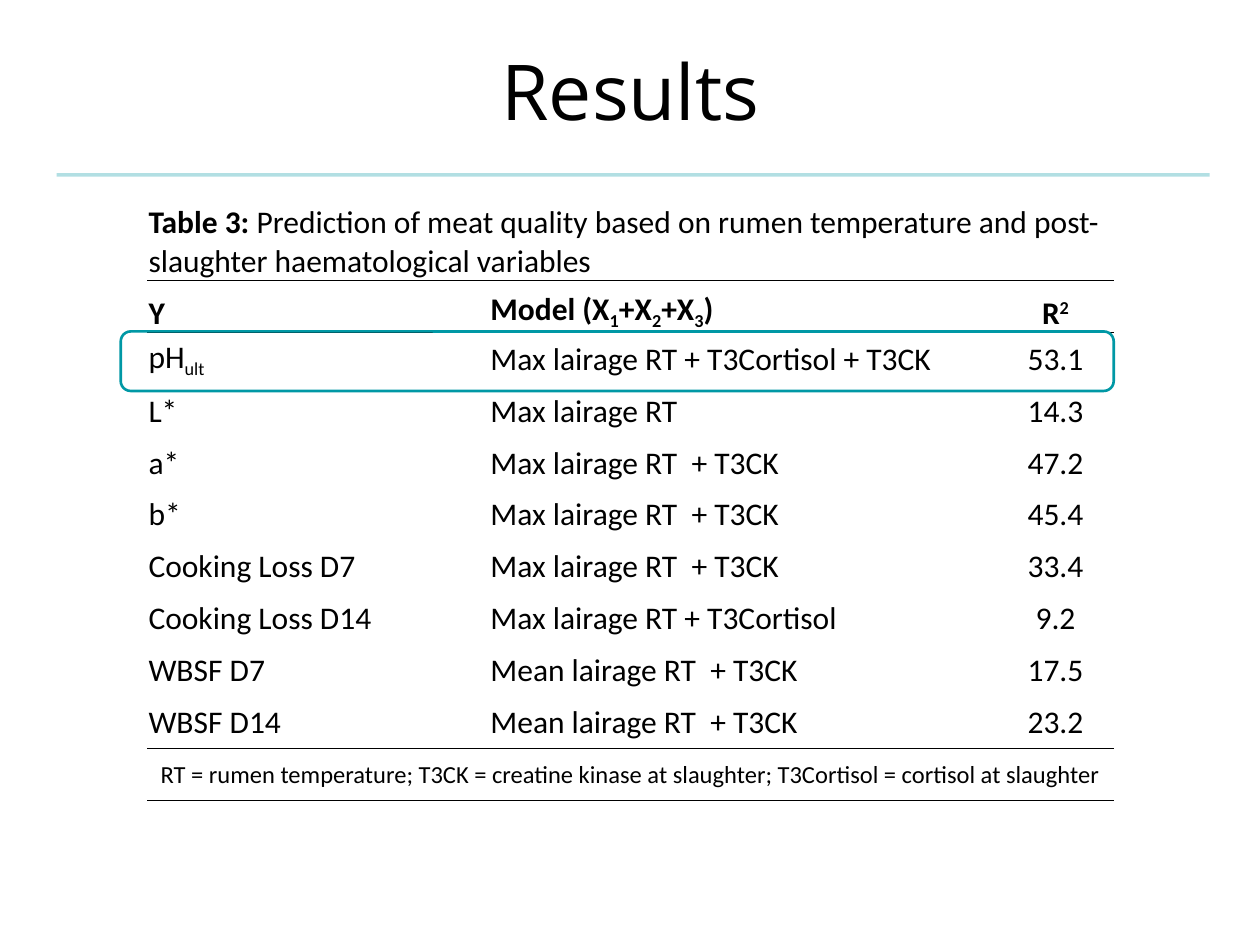
from lxml import etree
from pptx import Presentation
from pptx.dml.color import RGBColor
from pptx.enum import shapes, text
from pptx.oxml import ns
from pptx.util import Pt

TITLE = "Results"
TEAL, BLACK = "0098A5", "000000"
SUB, SUPER = -25, 30

CAPTION = [("Table 3: ", {"bold": True}),
           ("Prediction of meat quality based on rumen temperature and post-slaughter haematological variables", {})]
HEADER = [
    [("Y", 0)],
    [("Model (X", 0), ("1", SUB), ("+X", 0), ("2", SUB), ("+X", 0), ("3", SUB), (")", 0)],
    [("R", 0), ("2", SUPER)],
]
MODELS = [
    ([("pH", 0), ("ult", SUB)], "Max lairage RT + T3Cortisol + T3CK", "53.1"),
    ("L*", "Max lairage RT", "14.3"),
    ("a*", "Max lairage RT  + T3CK", "47.2"),
    ("b*", "Max lairage RT  + T3CK", "45.4"),
    ("Cooking Loss D7", "Max lairage RT  + T3CK", "33.4"),
    ("Cooking Loss D14", "Max lairage RT + T3Cortisol", "9.2"),
    ("WBSF D7", "Mean lairage RT  + T3CK", "17.5"),
    ("WBSF D14", "Mean lairage RT  + T3CK", "23.2"),
]
FOOTNOTE = "RT = rumen temperature; T3CK = creatine kinase at slaughter; T3Cortisol = cortisol at slaughter"

COLUMNS = [195.4, 290.4, 66.4]
CAPTION_H, ROW_H = 44.6, 29.7
ROWS = len(MODELS) + 3
RULES = {0: 0.5, 1: 0.5, ROWS - 2: 1, ROWS - 1: 0.5}
LEFT, CENTER = text.PP_ALIGN.LEFT, text.PP_ALIGN.CENTER
BOTTOM, MIDDLE = text.MSO_ANCHOR.BOTTOM, text.MSO_ANCHOR.MIDDLE


def rgb(value):
    return RGBColor.from_string(value)


def add_run(p, words, baseline=0, **formats):
    r = p.add_run()
    r.text = words
    r.font.color.rgb = rgb(BLACK)
    for name, value in ({"name": "Calibri", "size": Pt(18), "bold": False} | formats).items():
        setattr(r.font, name, value)
    if baseline:
        r._r.get_or_add_rPr().set("baseline", str(baseline * 1000))


def add_border(cell, index, side, width):
    ln = etree.Element(ns.qn(f"a:{side}"), w=str(Pt(width)))
    if width:
        fill = etree.SubElement(ln, ns.qn("a:solidFill"))
        etree.SubElement(fill, ns.qn("a:srgbClr"), val=BLACK)
    else:
        etree.SubElement(ln, ns.qn("a:noFill"))
    cell._tc.get_or_add_tcPr().insert(index, ln)


def style_cell(cell, row):
    cell.fill.background()
    margins = {"margin_left": Pt(0.7), "margin_right": Pt(0.7), "margin_top": Pt(0.7), "margin_bottom": Pt(0)}
    for name, value in margins.items():
        setattr(cell, name, value)
    cell.vertical_anchor = BOTTOM if row < 2 else MIDDLE
    widths = {"lnL": 0, "lnR": 0, "lnT": RULES.get(row - 1, 0), "lnB": RULES.get(row, 0)}
    for index, (side, width) in enumerate(widths.items()):
        add_border(cell, index, side, width)


def fill_cell(cell, runs, align, **formats):
    p = cell.text_frame.paragraphs[0]
    p.alignment = align
    for words, extra in runs:
        extra = extra if isinstance(extra, dict) else {"baseline": extra}
        add_run(p, words, **(formats | extra))


def add_title(s):
    tf = s.shapes.add_textbox(Pt(23), Pt(14.4), Pt(674.6), Pt(80.6)).text_frame
    tf.word_wrap = True
    tf.vertical_anchor = MIDDLE
    p = tf.paragraphs[0]
    p.alignment = CENTER
    p.line_spacing = 0.9
    add_run(p, TITLE, name="Open Sans", size=Pt(44))


def add_divider(s):
    line = s.shapes.add_connector(shapes.MSO_CONNECTOR.STRAIGHT, Pt(32.4), Pt(100), Pt(691.2), Pt(100))
    line.line.color.rgb = rgb(TEAL)
    line.line.width = Pt(2)
    color = line._element.spPr.find(".//" + ns.qn("a:srgbClr"))
    etree.SubElement(color, ns.qn("a:alpha"), val="30000")
    etree.SubElement(line._element.spPr, ns.qn("a:effectLst"))


def add_results(s):
    height = CAPTION_H + (ROWS - 1) * ROW_H
    table = s.shapes.add_table(ROWS, len(COLUMNS), Pt(84.2), Pt(115.9), Pt(sum(COLUMNS)), Pt(height)).table
    table.first_row = table.horz_banding = False
    for column, width in zip(table.columns, COLUMNS):
        column.width = Pt(width)
    for i, row in enumerate(table.rows):
        row.height = Pt(ROW_H if i else CAPTION_H)
        for cell in row.cells:
            style_cell(cell, i)
    for i in (0, ROWS - 1):
        table.cell(i, 0).merge(table.cell(i, len(COLUMNS) - 1))
    fill_cell(table.cell(0, 0), CAPTION, LEFT)
    for i, values in enumerate([HEADER, *MODELS], 1):
        for j, value in enumerate(values):
            runs = [(value, 0)] if isinstance(value, str) else value
            fill_cell(table.cell(i, j), runs, CENTER if j == 2 else LEFT, bold=i == 1)
    fill_cell(table.cell(ROWS - 1, 0), [(FOOTNOTE, 0)], CENTER, size=Pt(14))


def add_highlight(s):
    box = s.shapes.add_shape(shapes.MSO_SHAPE.ROUNDED_RECTANGLE, Pt(69), Pt(189.4), Pt(567.4), Pt(34))
    box.shadow.inherit = False
    box.fill.background()
    box.line.color.rgb = rgb(TEAL)
    box.line.width = Pt(1.5)


def main():
    prs = Presentation()
    prs.slide_width, prs.slide_height = Pt(720), Pt(540)
    s = prs.slides.add_slide(prs.slide_layouts[6])
    for add_part in (add_divider, add_title, add_results, add_highlight):
        add_part(s)
    prs.save("out.pptx")


if __name__ == "__main__":
    main()
